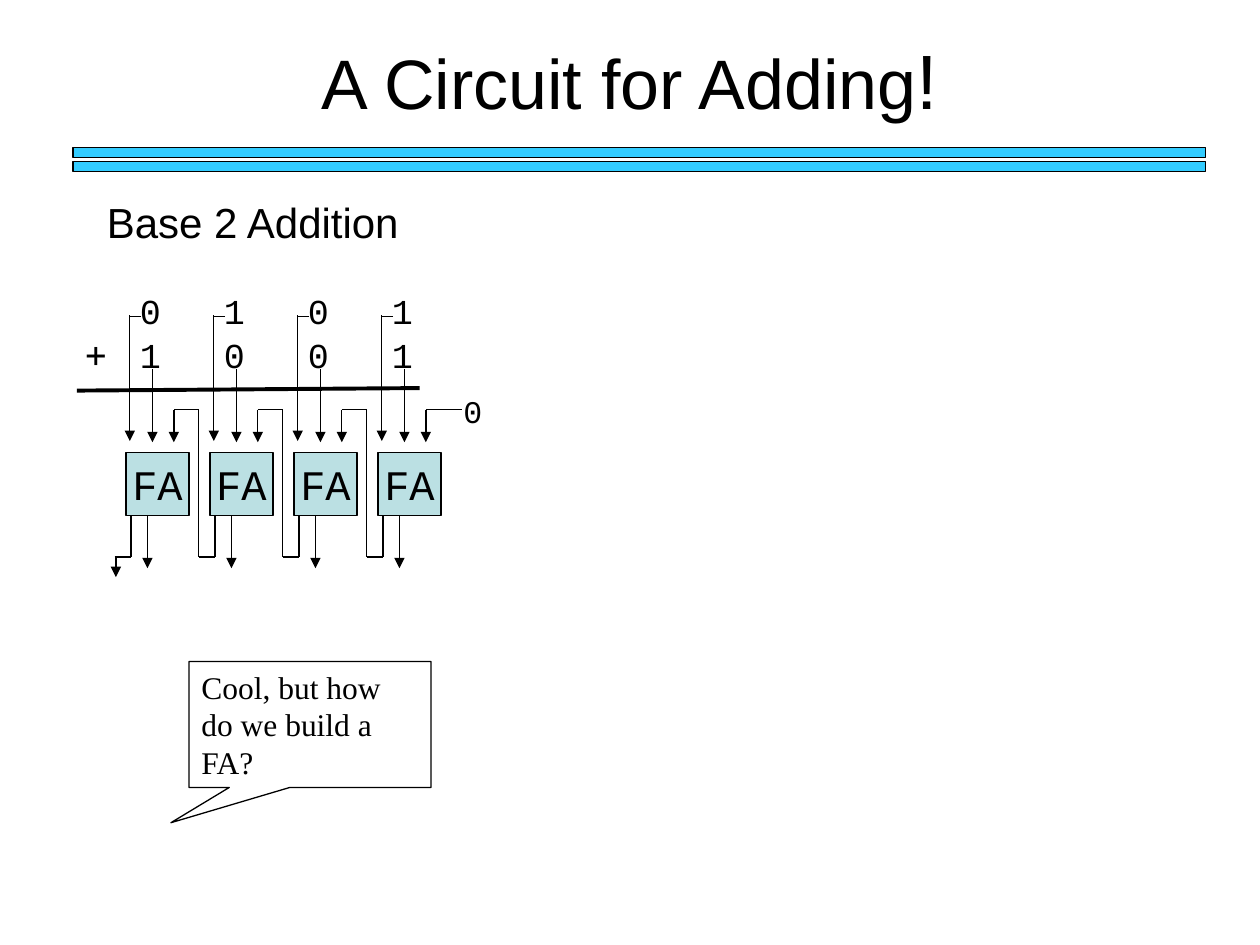
from lxml import etree
from pptx import Presentation
from pptx.dml.color import RGBColor
from pptx.enum.shapes import MSO_CONNECTOR, MSO_SHAPE
from pptx.enum.text import MSO_ANCHOR, PP_ALIGN
from pptx.oxml.ns import qn
from pptx.util import Inches, Pt

LINE = MSO_CONNECTOR.STRAIGHT
RECT = MSO_SHAPE.RECTANGLE
CALLOUT = MSO_SHAPE.RECTANGULAR_CALLOUT
MIDDLE, TOP = MSO_ANCHOR.MIDDLE, MSO_ANCHOR.TOP
LEFT, CENTER = PP_ALIGN.LEFT, PP_ALIGN.CENTER

# Content
TITLE = [("A Circuit for Adding", 40), ("!", 44)]
SUBTITLE = "Base 2 Addition"
ADDENDS = [["0", "1", "0", "1"], ["1", "0", "0", "1"]]
QUESTION = "Cool, but how do we build a FA?"
COLORS = {"ink": "000000", "bar": "33CCFF", "adder": "BBE0E3", "paper": "FFFFFF"}
SANS, MONO, SERIF = "Arial", "Courier New", "Times New Roman"

# Adder grid
FIRST_X, PITCH, SIDE = 1.0, 2 / 3, 0.5
ADDER_Y = 3.59
CARRY_TOP, CARRY_BOTTOM = 3.25, 4.42

# Wires of one adder: x1, y1, x2, y2 (x from the adder's left edge), arrowhead
WIRES = [
    (0.21, 2.93, 0.21, 3.51, True),                # lower digit
    (0.12, 2.51, 0.03, 2.51, False),               # upper digit
    (0.03, 2.5, 0.03, 3.5, True),
    (0.38, CARRY_TOP, 0.38, 3.51, True),           # carry in
    (0.17, 4.09, 0.17, 4.51, True),                # sum
    (0.04, 4.09, 0.04, CARRY_BOTTOM, False),       # carry out
    (-0.09, CARRY_BOTTOM, 0.04, CARRY_BOTTOM, False),
]
# Carry passed on to the adder on the left
CARRY_WIRES = [
    (-0.09, CARRY_BOTTOM, -0.09, CARRY_TOP, False),
    (-0.09, CARRY_TOP, 0.38 - PITCH, CARRY_TOP, False),
]

prs = Presentation()
prs.slide_width, prs.slide_height = Inches(10), Inches(7.5)
slide = prs.slides.add_slide(prs.slide_layouts[6])


def rgb(name):
    return RGBColor.from_string(COLORS[name])


def write(sp, paragraphs, font=SANS, size=24, align=LEFT, anchor=TOP, wrap=True):
    """Each paragraph is a string or a list of (text, size) runs."""
    tf = sp.text_frame
    tf.word_wrap, tf.vertical_anchor = wrap, anchor
    for i, runs in enumerate(paragraphs):
        p = tf.add_paragraph() if i else tf.paragraphs[0]
        p.alignment = align
        for text, pts in [(runs, size)] if isinstance(runs, str) else runs:
            r = p.add_run()
            r.text = text
            r.font.name, r.font.size = font, Pt(pts)
            r.font.color.rgb = rgb("ink")
    return tf


def add_text(x, y, w, h, paragraphs, **fmt):
    box = slide.shapes.add_textbox(Inches(x), Inches(y), Inches(w), Inches(h))
    return write(box, paragraphs, **fmt)


def add_box(x, y, w, h, fill, kind=RECT):
    sp = slide.shapes.add_shape(kind, Inches(x), Inches(y), Inches(w), Inches(h))
    sp.shadow.inherit = False
    sp.fill.solid()
    sp.fill.fore_color.rgb = rgb(fill)
    sp.line.color.rgb, sp.line.width = rgb("ink"), Pt(0.75)
    return sp


def add_line(x1, y1, x2, y2, arrow=False, width=0.75):
    cx = slide.shapes.add_connector(LINE, Inches(x1), Inches(y1), Inches(x2), Inches(y2))
    cx.line.color.rgb, cx.line.width = rgb("ink"), Pt(width)
    if arrow:
        etree.SubElement(cx.line._get_or_add_ln(), qn("a:tailEnd"), type="triangle")
    etree.SubElement(cx._element.spPr, qn("a:effectLst"))


# Title, double bar and subtitle
add_text(0.75, 0, 8.5, 1.25, [TITLE], align=CENTER, anchor=MIDDLE)
for y in (1.17, 1.28):
    add_box(0.58, y, 8.99, 0.08, "bar")
add_text(0.75, 1.51, 2.54, 0.5, [SUBTITLE], wrap=False)

# Sum: digits on tab stops that match the adder pitch
tf = add_text(0.84, 2.25, 2.57, 0.77, ["\t".join(row) for row in ADDENDS],
              font=MONO, size=20)
tf.margin_left = Inches(0.27)
tf.paragraphs[1].space_before = Pt(1)
for p in tf.paragraphs:
    tabs = etree.SubElement(p._p.get_or_add_pPr(), qn("a:tabLst"))
    for i in range(1, len(ADDENDS[0])):
        etree.SubElement(tabs, qn("a:tab"), pos=str(Inches(i * PITCH)), algn="l")
add_text(0.58, 2.59, 0.33, 0.43, ["+"], font="DejaVu Sans Mono", size=20)
add_line(0.61, 3.1, 3.33, 3.08, width=2.25)

# Full adders, from the lowest digit to the highest
for i in reversed(range(len(ADDENDS[0]))):
    left = FIRST_X + i * PITCH
    adder = add_box(left, ADDER_Y, SIDE, SIDE, "adder")
    write(adder, ["FA"], font=MONO, align=CENTER, anchor=MIDDLE, wrap=False)
    for x1, y1, x2, y2, arrow in WIRES + (CARRY_WIRES if i else []):
        add_line(left + x1, y1, left + x2, y2, arrow)

# First carry in and last carry out
add_text(3.58, 3.06, 0.35, 0.4, ["0"], font=MONO, size=18, wrap=False)
add_line(3.38, CARRY_TOP, 3.67, CARRY_TOP)
add_line(0.92, CARRY_BOTTOM, 0.92, 4.58, arrow=True)

# Question
callout = add_box(1.5, 5.25, 1.92, 1, "paper", CALLOUT)
callout.adjustments[0], callout.adjustments[1] = -0.575, 0.78
write(callout, [QUESTION], font=SERIF, size=18)

prs.save("out.pptx")
